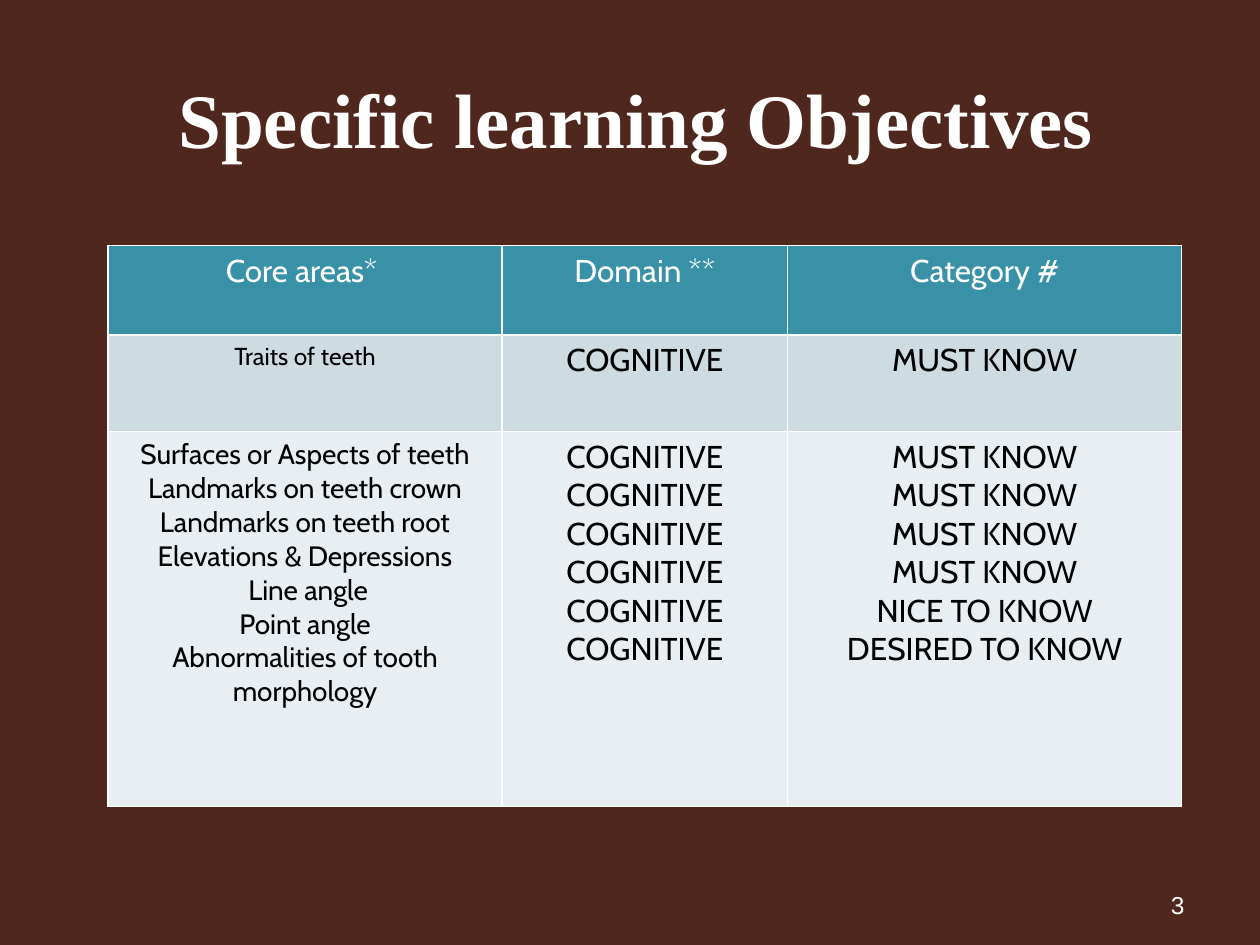
from dataclasses import dataclass

from lxml import etree
from pptx import Presentation
from pptx.dml.color import RGBColor
from pptx.enum.text import MSO_ANCHOR, PP_ALIGN
from pptx.oxml.ns import qn
from pptx.util import Cm, Pt

CENTER, RIGHT = PP_ALIGN.CENTER, PP_ALIGN.RIGHT
MIDDLE, BOTTOM = MSO_ANCHOR.MIDDLE, MSO_ANCHOR.BOTTOM
TITLE_ONLY = 5


@dataclass(frozen=True)
class Theme:
    background: str = "4F271C"
    light: str = "FFFFFF"
    dark: str = "000000"
    row_fills: tuple = ("3891A7", "CEDCE1", "E8EEF1")
    title_font: str = "Times New Roman"
    table_font: str = "Cabin"
    number_font: str = "Arial"
    title_size: int = 44
    table_size: int = 18
    area_sizes: tuple = (18, 14, 16)
    number_size: int = 14
    border_width: int = 1


class SlideBuilder:
    def __init__(self, presentation, theme):
        self.theme = theme
        self.slide = presentation.slides.add_slide(presentation.slide_layouts[TITLE_ONLY])
        fill = self.slide.background.fill
        fill.solid()
        fill.fore_color.rgb = RGBColor.from_string(theme.background)

    def fill_text(self, frame, lines, font_name, size, color, alignment=CENTER, bold=False):
        frame.word_wrap = True
        for index, line in enumerate(lines):
            paragraph = frame.add_paragraph() if index else frame.paragraphs[0]
            paragraph.text = line
            paragraph.alignment = alignment
            font = paragraph.font
            font.name, font.size, font.bold = font_name, Pt(size), bold
            font.color.rgb = RGBColor.from_string(color)

    def title(self, text, left, top, width, height):
        shape = self.slide.shapes.title
        shape.left, shape.top, shape.width, shape.height = map(Cm, (left, top, width, height))
        shape.text_frame.vertical_anchor = MIDDLE
        theme = self.theme
        self.fill_text(shape.text_frame, [text], theme.title_font, theme.title_size, theme.light, bold=True)

    def slide_number(self, text, left, top, width, height):
        shape = self.slide.shapes.add_textbox(*map(Cm, (left, top, width, height)))
        shape.text_frame.vertical_anchor = BOTTOM
        theme = self.theme
        self.fill_text(shape.text_frame, [text], theme.number_font, theme.number_size, theme.light, RIGHT)

    def border(self, cell):
        properties = cell._tc.get_or_add_tcPr()
        for side in ("a:lnL", "a:lnR", "a:lnT", "a:lnB"):
            line = etree.SubElement(properties, qn(side), w=str(Pt(self.theme.border_width)))
            solid = etree.SubElement(line, qn("a:solidFill"))
            etree.SubElement(solid, qn("a:srgbClr"), val=self.theme.light)

    def table(self, rows, left, top, column_widths, row_heights):
        theme = self.theme
        size = (sum(column_widths), sum(row_heights))
        table = self.slide.shapes.add_table(
            len(rows), len(column_widths), *map(Cm, (left, top, *size))
        ).table
        for column, width in zip(table.columns, column_widths):
            column.width = Cm(width)
        for row_index, row in enumerate(rows):
            table.rows[row_index].height = Cm(row_heights[row_index])
            color = theme.dark if row_index else theme.light
            for column_index, lines in enumerate(row):
                cell = table.cell(row_index, column_index)
                cell.margin_left = cell.margin_right = Cm(0.18)
                cell.margin_top = cell.margin_bottom = Cm(0.13)
                self.border(cell)
                cell.fill.solid()
                cell.fill.fore_color.rgb = RGBColor.from_string(theme.row_fills[row_index])
                text_size = theme.table_size if column_index else theme.area_sizes[row_index]
                self.fill_text(cell.text_frame, lines, theme.table_font, text_size, color)


def main():
    presentation = Presentation()
    presentation.slide_width, presentation.slide_height = Cm(25.4), Cm(19.05)
    builder = SlideBuilder(presentation, Theme())
    builder.title("Specific learning Objectives ", 3.18, 0.84, 19.3, 3.07)
    areas = [
        "Surfaces or Aspects of teeth",
        "Landmarks on teeth crown",
        "Landmarks on teeth root",
        "Elevations & Depressions",
        " Line angle",
        "Point angle",
        "Abnormalities of tooth morphology",
    ]
    categories = ["MUST KNOW"] * 4 + ["NICE TO KNOW", "DESIRED TO KNOW"]
    objectives = [
        [["Core areas* "], ["Domain **"], ["Category #"]],
        [["Traits of teeth"], ["COGNITIVE"], ["MUST KNOW"]],
        [areas, ["COGNITIVE"] * len(categories), categories],
    ]
    builder.table(objectives, 2.18, 4.95, (7.94, 5.76, 7.94), (1.8, 1.95, 7.56))
    builder.slide_number("3", 18.21, 17.35, 5.92, 1.32)
    presentation.save("out.pptx")


if __name__ == "__main__":
    main()
